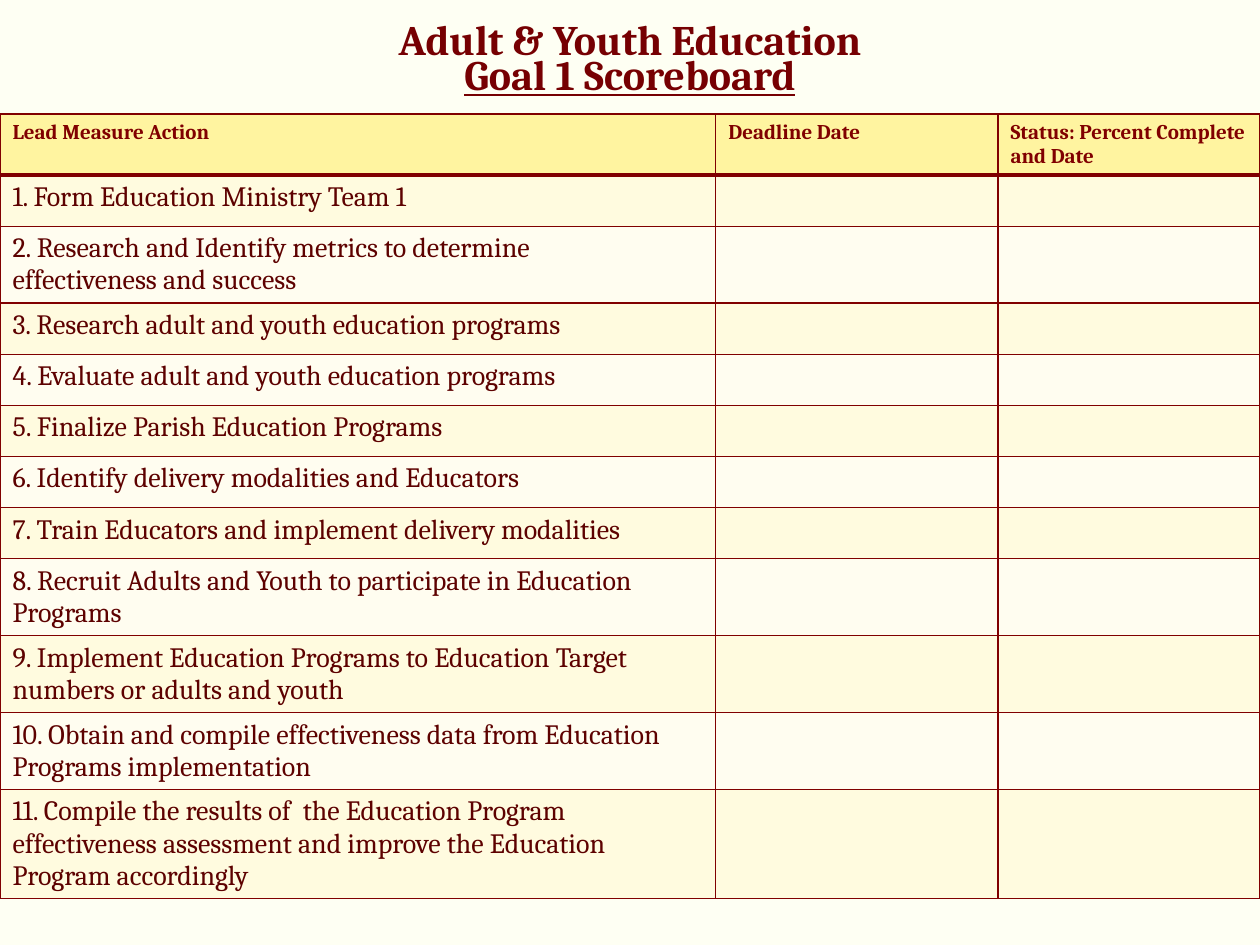
"""Build the education goal scoreboard slide."""
from lxml import etree
from pptx import Presentation
from pptx import util as u
from pptx.dml import color
from pptx.enum import text
from pptx.oxml import ns

HEADINGS = ["Lead Measure Action", "Deadline Date", "Status: Percent Complete and Date"]
ACTIONS = [
    "1. Form Education Ministry Team 1",
    "2. Research and Identify metrics to determine \teffectiveness and success",
    "3. Research adult and youth education programs",
    "4. Evaluate adult and youth education programs",
    "5. Finalize Parish Education Programs",
    "6. Identify delivery modalities and Educators",
    "7. Train Educators and implement delivery modalities",
    "8. Recruit Adults and Youth to participate in Education Programs",
    "9. Implement Education Programs to Education Target numbers or adults and youth",
    "10. Obtain and compile effectiveness data from Education Programs implementation",
    "11. Compile the results of  the Education Program effectiveness assessment "
    "and improve the Education Program accordingly",
]
BORDER = "800000"


def write(para, words, size, ink, bold=False, underline=False):
    span = para.add_run()
    span.text = words
    span.font.name = "Cambria"
    span.font.size = u.Pt(size)
    span.font.bold = bold
    span.font.underline = underline
    span.font.color.rgb = color.RGBColor.from_string(ink)


def style_cell(cell, fill, bottom):
    properties = cell._tc.get_or_add_tcPr()
    for side, width in (("L", 1), ("R", 1), ("T", 1), ("B", bottom)):
        line = etree.SubElement(properties, ns.qn(f"a:ln{side}"), w=str(u.Pt(width)))
        solid = etree.SubElement(line, ns.qn("a:solidFill"))
        etree.SubElement(solid, ns.qn("a:srgbClr"), val=BORDER)
    cell.fill.solid()
    cell.fill.fore_color.rgb = color.RGBColor.from_string(fill)


deck = Presentation()
deck.slide_width, deck.slide_height = u.Pt(720), u.Pt(540)
page = deck.slides.add_slide(deck.slide_layouts[5])
page.background.fill.solid()
page.background.fill.fore_color.rgb = color.RGBColor.from_string("FEFFF3")

title = page.shapes.title
title.left, title.top, title.width, title.height = u.Pt(77), u.Pt(-9.4), u.Pt(566), u.Pt(90)
title.text_frame.auto_size = text.MSO_AUTO_SIZE.NONE
title.text_frame.vertical_anchor = text.MSO_ANCHOR.MIDDLE
para = title.text_frame.paragraphs[0]
para.alignment = text.PP_ALIGN.CENTER
para.line_spacing = 0.7
write(para, "Adult & Youth Education", 24, "760002", bold=True)
para.add_line_break()
write(para, "Goal 1 Scoreboard", 24, "760002", bold=True, underline=True)

frame = page.shapes.add_table(len(ACTIONS) + 1, 3, 0, u.Pt(65.2), u.Pt(720), u.Pt(448))
table = frame.table
for column, width in zip(table.columns, (409, 161.3, 149.7)):
    column.width = u.Pt(width)
for row in table.rows:
    row.height = u.Pt(29.2)
table.rows[0].height = u.Pt(34.9)

for cell, heading in zip(table.rows[0].cells, HEADINGS):
    style_cell(cell, "FFF4A0", 3)
    write(cell.text_frame.paragraphs[0], heading, 12, BORDER, bold=True)

for number, action in enumerate(ACTIONS, 1):
    cells = table.rows[number].cells
    for cell in cells:
        style_cell(cell, "FFFBDF" if number % 2 else "FFFDF0", 1)
        if number == 1:
            cell._tc.tcPr.find(ns.qn("a:lnT")).set("w", str(u.Pt(3)))
    write(cells[0].text_frame.paragraphs[0], action, 16, "5D0100")

deck.save("out.pptx")
